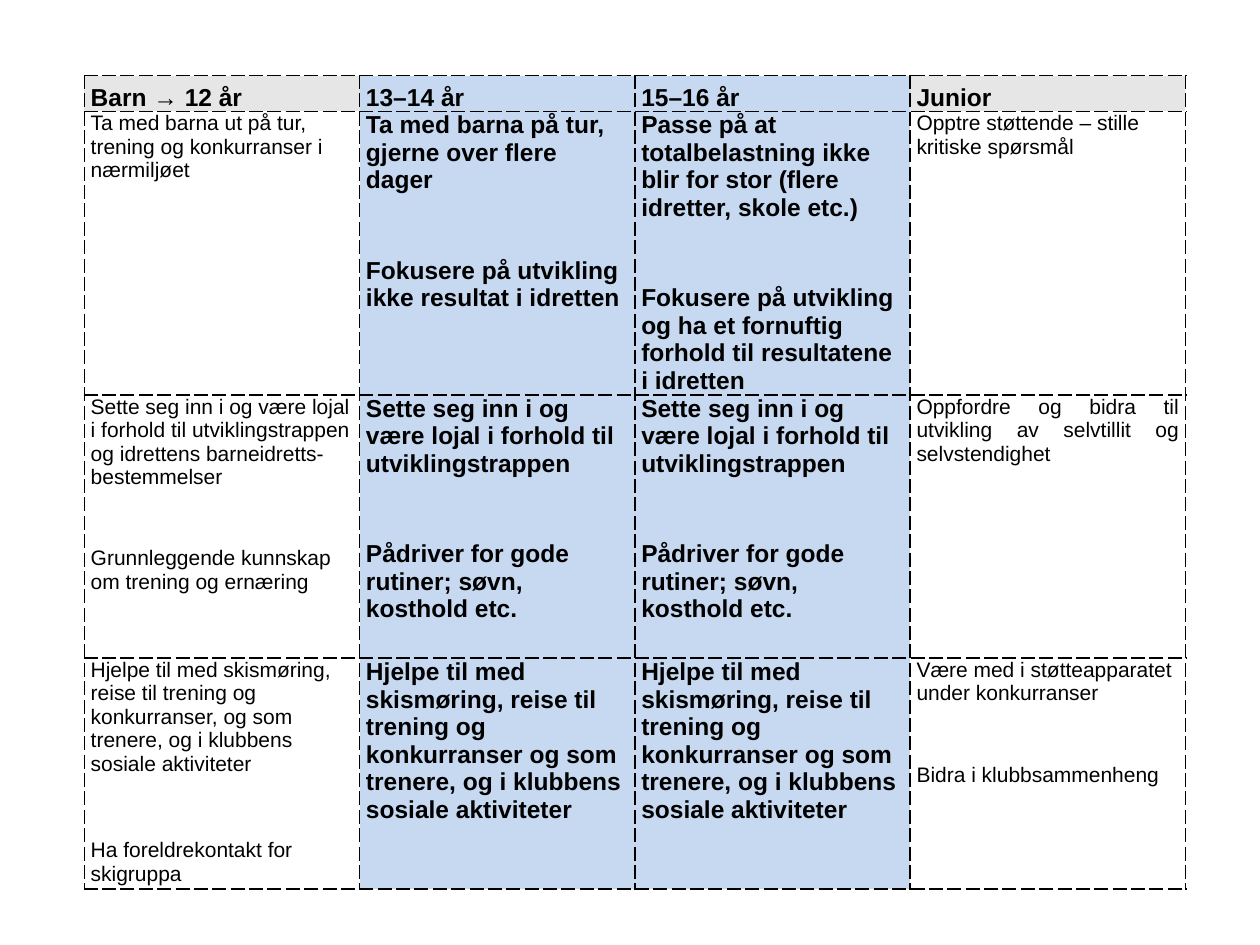
from lxml import etree
from pptx import Presentation
from pptx.dml.color import RGBColor
from pptx.enum.text import PP_ALIGN
from pptx.oxml.ns import qn
from pptx.util import Inches, Pt

JUSTIFY = PP_ALIGN.JUSTIFY
LEFT = PP_ALIGN.LEFT
BLACK = RGBColor(0x00, 0x00, 0x00)
GREY = RGBColor(0xE6, 0xE6, 0xE6)
BLUE = RGBColor(0xC6, 0xD9, 0xF1)

HELP_TEXT = (
    "Hjelpe til med skismøring, reise til trening og konkurranser og som trenere, "
    "og i klubbens sosiale aktiviteter"
)
ROUTINE_TEXTS = [
    "Sette seg inn i og være lojal i forhold til utviklingstrappen",
    "Pådriver for gode rutiner; søvn, kosthold etc.",
]
ROWS = [
    [["Barn → 12 år"], ["13–14 år"], ["15–16 år"], ["Junior"]],
    [
        ["Ta med barna ut på tur, trening og konkurranser i nærmiljøet"],
        [
            "Ta med barna på tur, gjerne over flere dager",
            "Fokusere på utvikling ikke resultat i idretten",
        ],
        [
            "Passe på at totalbelastning ikke blir for stor (flere idretter, skole etc.)",
            "Fokusere på utvikling og ha et fornuftig forhold til resultatene i idretten",
        ],
        ["Opptre støttende – stille kritiske spørsmål"],
    ],
    [
        [
            "Sette seg inn i og være lojal i forhold til utviklingstrappen "
            "og idrettens barneidretts-bestemmelser",
            "Grunnleggende kunnskap om trening og ernæring",
        ],
        ROUTINE_TEXTS,
        ROUTINE_TEXTS,
        ["Oppfordre og bidra til utvikling av selvtillit og selvstendighet"],
    ],
    [
        [
            "Hjelpe til med skismøring, reise til trening og konkurranser, "
            "og som trenere, og i klubbens sosiale aktiviteter",
            "Ha foreldrekontakt for skigruppa",
        ],
        [HELP_TEXT],
        [HELP_TEXT],
        [
            "Være med i støtteapparatet under konkurranser",
            "Bidra i klubbsammenheng",
        ],
    ],
]
ROW_HEIGHTS = [0.28, 2.25, 2.09, 1.83]
TABLE_WIDTH = 8.74
HIGHLIGHTED_COLUMNS = (1, 2)
JUSTIFIED_CELL = (2, 3)
WIDE_GAP_CELL = (3, 0)


def add_dashed_borders(cell):
    properties = cell._tc.get_or_add_tcPr()
    for position, side in enumerate(("a:lnL", "a:lnR", "a:lnT", "a:lnB")):
        line = etree.Element(qn(side), w=str(Pt(1)))
        fill = etree.SubElement(line, qn("a:solidFill"))
        etree.SubElement(fill, qn("a:srgbClr"), val=str(BLACK))
        etree.SubElement(line, qn("a:prstDash"), val="dash")
        properties.insert(position, line)


presentation = Presentation()
presentation.slide_width = Inches(10)
presentation.slide_height = Inches(7.5)
slide = presentation.slides.add_slide(presentation.slide_layouts[6])

table = slide.shapes.add_table(
    len(ROWS), len(ROWS[0]), Inches(0.67), Inches(0.6),
    Inches(TABLE_WIDTH), Inches(sum(ROW_HEIGHTS)),
).table
table.first_row = False
table.horz_banding = False

for row_index, (height, row_texts) in enumerate(zip(ROW_HEIGHTS, ROWS)):
    table.rows[row_index].height = Inches(height)
    is_header = row_index == 0
    for column_index, texts in enumerate(row_texts):
        cell = table.cell(row_index, column_index)
        is_highlighted = column_index in HIGHLIGHTED_COLUMNS
        is_bold = is_header or is_highlighted
        position = (row_index, column_index)

        cell.margin_left = cell.margin_right = Inches(0.05)
        cell.margin_top = cell.margin_bottom = 0
        if is_bold:
            cell.fill.solid()
            cell.fill.fore_color.rgb = BLUE if is_highlighted else GREY
        else:
            cell.fill.background()
        add_dashed_borders(cell)

        cell.text_frame.text = "\n".join(texts)
        for paragraph_index, paragraph in enumerate(cell.text_frame.paragraphs):
            paragraph.alignment = JUSTIFY if is_header or position == JUSTIFIED_CELL else LEFT
            if is_header:
                paragraph.line_spacing = 1.3
            if paragraph_index == 0:
                paragraph.space_before = Pt(10)
            else:
                paragraph.space_before = Pt(36 if is_bold or position == WIDE_GAP_CELL else 33)
            for run in paragraph.runs:
                run.font.name = "Arial"
                run.font.size = Pt(14 if is_bold else 12)
                run.font.bold = is_bold
                run.font.color.rgb = BLACK

presentation.save("out.pptx")
